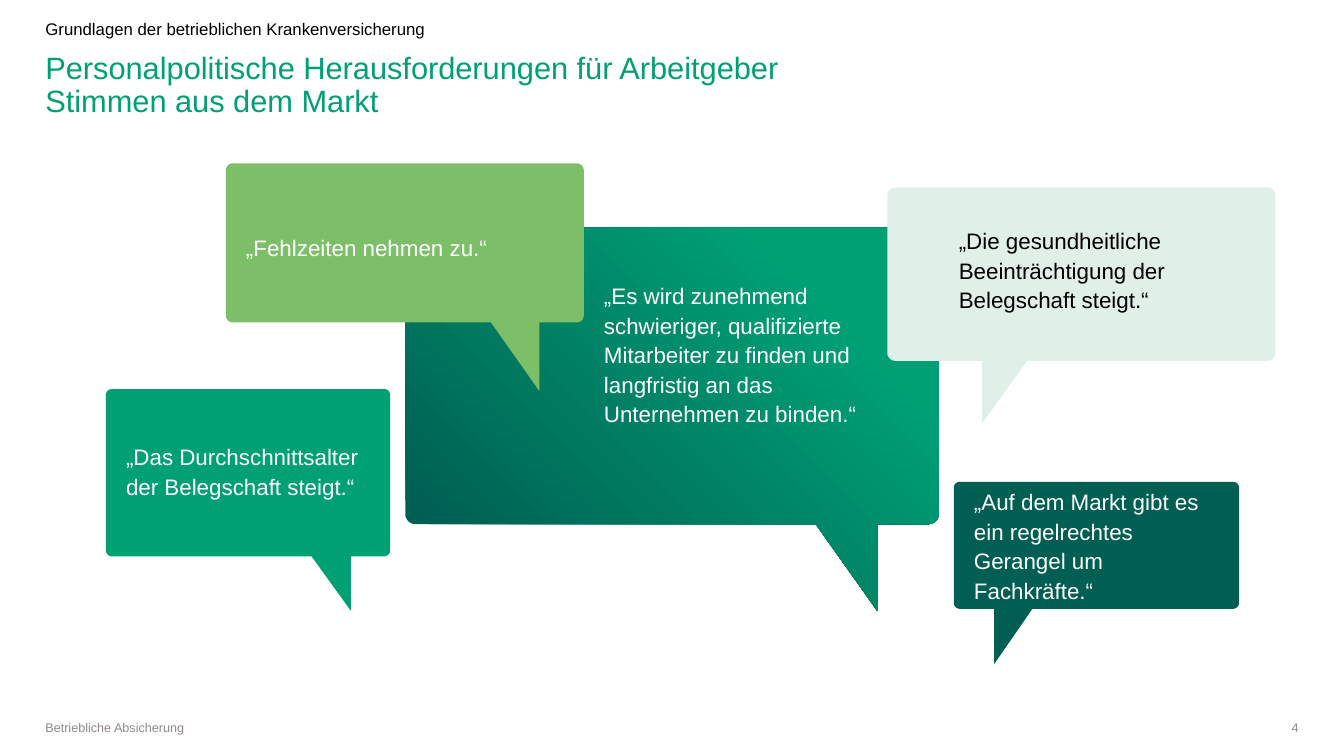
import math
from dataclasses import dataclass
from typing import NamedTuple

from lxml import etree
from pptx import Presentation
from pptx import util as u
from pptx.dml.color import RGBColor
from pptx.enum import text as t
from pptx.oxml import ns

PX = 9144
CORNER_STEPS = 8


@dataclass(frozen=True)
class Theme:
    font: str = "Arial"
    green: str = "00A075"
    dark: str = "005E52"
    light: str = "7DBF68"
    mint: str = "E0F0E8"
    grey: str = "918A87"
    black: str = "000000"
    white: str = "FFFFFF"
    title_size: int = 22
    quote_size: int = 16
    topic_size: int = 12
    footer_size: int = 9


class Area(NamedTuple):
    left: int
    top: int
    width: int
    height: int


class Tail(NamedTuple):
    left: int
    right: int
    tip_x: int
    tip_y: int


class Style(NamedTuple):
    size: int
    color: str
    spacing: float = 1.0
    anchor: t.MSO_ANCHOR = t.MSO_ANCHOR.TOP
    align: t.PP_ALIGN = t.PP_ALIGN.LEFT
    inset: int = 0


class Bubble(NamedTuple):
    area: Area
    radius: int
    tail: Tail
    fills: tuple[str, ...]
    text_area: Area
    quote: str
    color: str


THEME = Theme()

BUBBLES = (
    Bubble(Area(946, 478, 283, 126), 6, Tail(986, 1024, 986, 659), (THEME.dark,),
           Area(946, 487, 282, 107),
           "„Auf dem Markt gibt es ein regelrechtes Gerangel um Fachkräfte.“", THEME.white),
    Bubble(Area(402, 226, 529, 294), 10, Tail(809, 870, 870, 606), (THEME.dark, THEME.green),
           Area(579, 242, 311, 217),
           "„Es wird zunehmend schwieriger, qualifizierte Mitarbeiter zu finden "
           "und langfristig an das Unternehmen zu binden.“", THEME.white),
    Bubble(Area(105, 386, 282, 166), 6, Tail(309, 348, 348, 606), (THEME.green,),
           Area(105, 399, 282, 135),
           "„Das Durchschnittsalter der Belegschaft steigt.“", THEME.white),
    Bubble(Area(224, 162, 355, 158), 7, Tail(487, 535, 535, 388), (THEME.light,),
           Area(224, 173, 354, 143), "„Fehlzeiten nehmen zu.“", THEME.white),
    Bubble(Area(880, 186, 385, 172), 8, Tail(974, 1019, 974, 420), (THEME.mint,),
           Area(931, 194, 334, 146),
           "„Die gesundheitliche Beeinträchtigung der Belegschaft steigt.“", THEME.black),
)


def apply(target: object, values: dict) -> None:
    for name, value in values.items():
        setattr(target, name, value)


def write(box, area: Area, style: Style, *lines: str) -> None:
    apply(box, {name: value * PX for name, value in area._asdict().items()})
    frame = box.text_frame
    apply(frame, {
        "word_wrap": True, "auto_size": t.MSO_AUTO_SIZE.NONE,
        "vertical_anchor": style.anchor,
        "margin_left": style.inset * PX, "margin_right": style.inset * PX,
        "margin_top": 0, "margin_bottom": 0,
    })
    para = frame.paragraphs[0]
    apply(para, {"alignment": style.align, "line_spacing": style.spacing,
                 "space_before": u.Pt(0)})
    for index, line in enumerate(lines):
        if index:
            para.add_line_break()
        span = para.add_run()
        span.text = line
        apply(span.font, {"name": THEME.font, "size": u.Pt(style.size)})
        span.font.color.rgb = RGBColor.from_string(style.color)


def add_text(page, area: Area, style: Style, *lines: str) -> None:
    write(page.shapes.add_textbox(0, 0, 0, 0), area, style, *lines)


def remove_bullet(para) -> None:
    properties = para._p.get_or_add_pPr()
    properties.set("marL", "0")
    properties.set("indent", "0")
    etree.SubElement(properties, ns.qn("a:buNone"))


def corner(x: int, y: int, radius: int, start: int) -> list[tuple[float, float]]:
    angles = [math.radians(start + 90 * step / CORNER_STEPS) for step in range(CORNER_STEPS + 1)]
    return [(x + radius * math.cos(angle), y + radius * math.sin(angle)) for angle in angles]


def outline(bubble: Bubble) -> list[tuple[float, float]]:
    area, radius, tail = bubble.area, bubble.radius, bubble.tail
    bottom = area.top + area.height
    left, right = area.left + radius, area.left + area.width - radius
    upper, lower = area.top + radius, bottom - radius
    return [
        *corner(left, upper, radius, 180),
        *corner(right, upper, radius, 270),
        *corner(right, lower, radius, 0),
        (tail.right, bottom), (tail.tip_x, tail.tip_y), (tail.left, bottom),
        *corner(left, lower, radius, 90),
    ]


def paint(shape, fills: tuple[str, ...]) -> None:
    shape.shadow.inherit = False
    shape.line.fill.background()
    if len(fills) == 1:
        shape.fill.solid()
        shape.fill.fore_color.rgb = RGBColor.from_string(fills[0])
        return
    shape.fill.gradient()
    shape.fill.gradient_angle = 45
    for stop, color, position in zip(shape.fill.gradient_stops, fills, (0.1, 0.8)):
        stop.color.rgb = RGBColor.from_string(color)
        stop.position = position


def add_bubble(page, bubble: Bubble) -> None:
    points = [(x * PX, y * PX) for x, y in outline(bubble)]
    builder = page.shapes.build_freeform(*points[0])
    builder.add_line_segments(points[1:], close=True)
    paint(builder.convert_to_shape(), bubble.fills)
    style = Style(THEME.quote_size, bubble.color, 1.1, t.MSO_ANCHOR.MIDDLE, inset=20)
    add_text(page, bubble.text_area, style, bubble.quote)


def main() -> None:
    deck = Presentation()
    apply(deck, {"slide_width": 1333 * PX, "slide_height": 750 * PX})
    page = deck.slides.add_slide(deck.slide_layouts[1])
    write(page.shapes.title, Area(45, 52, 1244, 78), Style(THEME.title_size, THEME.green, 0.9),
          "Personalpolitische Herausforderungen für Arbeitgeber", "Stimmen aus dem Markt")
    topic = page.placeholders[1]
    remove_bullet(topic.text_frame.paragraphs[0])
    write(topic, Area(45, 21, 835, 16), Style(THEME.topic_size, THEME.black, 0.9),
          "Grundlagen der betrieblichen Krankenversicherung")
    for bubble in BUBBLES:
        add_bubble(page, bubble)
    footer = Style(THEME.footer_size, THEME.grey, anchor=t.MSO_ANCHOR.BOTTOM)
    add_text(page, Area(45, 716, 512, 13), footer, "Betriebliche Absicherung")
    add_text(page, Area(1237, 716, 51, 13), footer._replace(align=t.PP_ALIGN.RIGHT), "4")
    deck.save("out.pptx")


if __name__ == "__main__":
    main()
